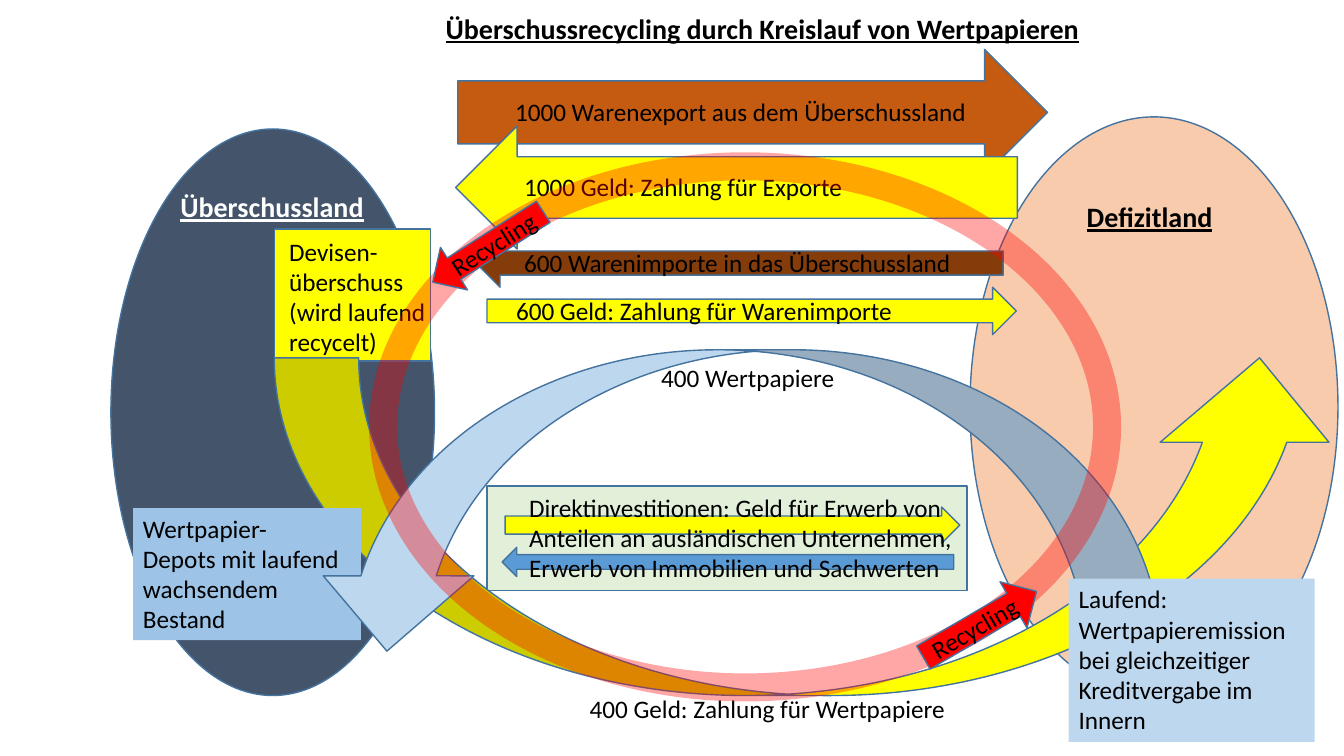
import dataclasses
import pptx
import pptx.util
import pptx.dml.color
import pptx.enum.shapes
import pptx.enum.text
import pptx.oxml
import pptx.oxml.ns

Inches = pptx.util.Inches
Pt = pptx.util.Pt
PRESET = pptx.enum.shapes.MSO_SHAPE
ALIGN = pptx.enum.text.PP_ALIGN
ANCHOR = pptx.enum.text.MSO_ANCHOR
FIT = pptx.enum.text.MSO_AUTO_SIZE


@dataclasses.dataclass(frozen=True)
class Theme:
    font: str = "Calibri"
    heading_size: int = 20
    body_size: int = 18
    outline_width: float = 1
    ring_width: float = 20
    ring_opacity: int = 34
    ink: str = "000000"
    white: str = "FFFFFF"
    outline: str = "43739E"
    surplus: str = "44546A"
    deficit: str = "F8CBAD"
    investment: str = "E2F0D9"
    exports: str = "C55A11"
    imports: str = "843C0B"
    money: str = "FFFF00"
    depot: str = "9DC3E6"
    securities: str = "BDD7EE"
    assets: str = "5B9BD5"
    recycling: str = "FF0000"


THEME = Theme()

TITLE = ("Überschussrecycling durch Kreislauf von Wertpapieren", (4.32, 0.06, 6.54, 0.44))

ELEMENTS = [
    ("shape", PRESET.RECTANGLE, (4.83, 4.82, 4.76, 1.04), THEME.investment, 0),
    ("shape", PRESET.OVAL, (1.1, 1.28, 3.21, 5.62), THEME.surplus, 0),
    ("shape", PRESET.OVAL, (9.62, 1.16, 3.65, 5.75), THEME.deficit, 0),
    ("heading", "Überschussland", (1.69, 1.83, 2.04, 0.44), THEME.white),
    ("heading", "Defizitland", (10.68, 1.93, 1.46, 0.44), THEME.ink),
    ("shape", PRESET.RIGHT_ARROW, (4.54, 0.49, 5.85, 1.25), THEME.exports, 0),
    ("shape", PRESET.LEFT_ARROW, (4.52, 1.25, 5.57, 1.22), THEME.money, 0),
    ("shape", PRESET.LEFT_ARROW, (4.72, 2.37, 5.23, 0.48), THEME.imports, 0),
    ("shape", PRESET.RIGHT_ARROW, (4.83, 2.85, 5.25, 0.47), THEME.money, 0),
    ("label", "1000 Warenexport aus dem Überschussland", (5.01, 0.91, 4.73, 0.4)),
    ("label", "1000 Geld: Zahlung für Exporte", (5.1, 1.65, 4.73, 0.4)),
    ("label", "600 Geld: Zahlung für Warenimporte", (5.02, 2.88, 4.73, 0.4)),
    ("label", "600 Warenimporte in das Überschussland", (5.1, 2.4, 4.73, 0.4)),
    ("shape", PRESET.RECTANGLE, (2.72, 2.27, 1.55, 1.31), THEME.money, 0),
    ("shape", PRESET.CURVED_RIGHT_ARROW, (6.35, -0.08, 3.35, 10.61), THEME.money, 270),
    ("note", "Wertpapier-\nDepots mit laufend wachsendem Bestand", (1.32, 5.04, 2.26, 1.31), THEME.depot),
    ("label", "Devisen-überschuss (wird laufend recycelt)", (2.77, 2.29, 1.66, 1.31)),
    ("label", "400 Geld: Zahlung für Wertpapiere", (5.75, 6.83, 4.07, 0.4)),
    ("label", "400 Wertpapiere", (6.46, 3.55, 2, 0.4)),
    ("shape", PRESET.CURVED_UP_ARROW, (3.09, 3.47, 8.42, 2.99), THEME.securities, 180),
    ("note", "Laufend:\vWertpapieremission bei gleichzeitiger Kreditvergabe im Innern",
     (10.6, 5.74, 2.44, 1.62), THEME.securities),
    ("shape", PRESET.RIGHT_ARROW, (5.01, 5.03, 4.51, 0.36), THEME.money, 0),
    ("shape", PRESET.LEFT_ARROW, (4.98, 5.43, 4.48, 0.29), THEME.assets, 0),
    ("label", "Direktinvestitionen: Geld für Erwerb von Anteilen an ausländischen Unternehmen, "
              "Erwerb von Immobilien und Sachwerten", (5.15, 4.83, 4.45, 1.01)),
    ("ring", (3.8, 1.65, 7.18, 5.17)),
    ("recycling", "Recycling", (9.07, 5.93, 1.3, 0.53), 329.7, False),
    ("recycling", "Recycling", (4.19, 2.2, 1.3, 0.5), 147.5, True),
]


def rgb(color):
    return pptx.dml.color.RGBColor.from_string(color)


def write(holder, text, color=THEME.ink, heading=False, align=ALIGN.LEFT,
          anchor=ANCHOR.TOP, fit=FIT.SHAPE_TO_FIT_TEXT):
    frame = holder.text_frame
    frame.text = text
    frame.word_wrap = not heading
    frame.vertical_anchor = anchor
    frame.auto_size = fit
    for paragraph in frame.paragraphs:
        paragraph.alignment = align
        font = paragraph.font
        font.name = THEME.font
        font.size = Pt(THEME.heading_size if heading else THEME.body_size)
        font.bold = heading
        font.underline = heading
        font.color.rgb = rgb(color)


def add_shape(slide, preset, box, fill, rotation=0, outlined=True):
    shape = slide.shapes.add_shape(preset, *map(Inches, box))
    shape.shadow.inherit = False
    shape.rotation = rotation
    shape.fill.solid()
    shape.fill.fore_color.rgb = rgb(fill)
    if outlined:
        shape.line.color.rgb = rgb(THEME.outline)
        shape.line.width = Pt(THEME.outline_width)
    else:
        shape.line.fill.background()
    return shape


def add_heading(slide, text, box, color):
    write(slide.shapes.add_textbox(*map(Inches, box)), text, color, heading=True)


def add_label(slide, text, box):
    write(slide.shapes.add_textbox(*map(Inches, box)), text)


def add_note(slide, text, box, fill):
    write(add_shape(slide, PRESET.RECTANGLE, box, fill, outlined=False), text)


def add_ring(slide, box):
    ring = add_shape(slide, PRESET.OVAL, box, THEME.recycling)
    ring.fill.background()
    ring.line.color.rgb = rgb(THEME.recycling)
    ring.line.width = Pt(THEME.ring_width)
    color = ring.line._ln.find(".//" + pptx.oxml.ns.qn("a:srgbClr"))
    opacity = pptx.oxml.parse_xml(
        f'<a:alpha {pptx.oxml.ns.nsdecls("a")} val="{THEME.ring_opacity * 1000}"/>')
    color.append(opacity)


def add_recycling(slide, text, box, rotation, flipped):
    arrow = add_shape(slide, PRESET.RIGHT_ARROW, box, THEME.recycling, rotation)
    if flipped:
        arrow._element.spPr.xfrm.set("flipV", "1")
    write(arrow, text, align=ALIGN.CENTER, anchor=ANCHOR.MIDDLE, fit=FIT.NONE)


BUILDERS = {
    "shape": add_shape,
    "heading": add_heading,
    "label": add_label,
    "note": add_note,
    "ring": add_ring,
    "recycling": add_recycling,
}


def main():
    deck = pptx.Presentation()
    deck.slide_width, deck.slide_height = Inches(13.33), Inches(7.5)
    slide = deck.slides.add_slide(deck.slide_layouts.get_by_name("Title Only"))
    title = slide.shapes.title
    text, box = TITLE
    title.left, title.top, title.width, title.height = map(Inches, box)
    write(title, text, heading=True)
    for role, *details in ELEMENTS:
        BUILDERS[role](slide, *details)
    deck.save("out.pptx")


if __name__ == "__main__":
    main()
